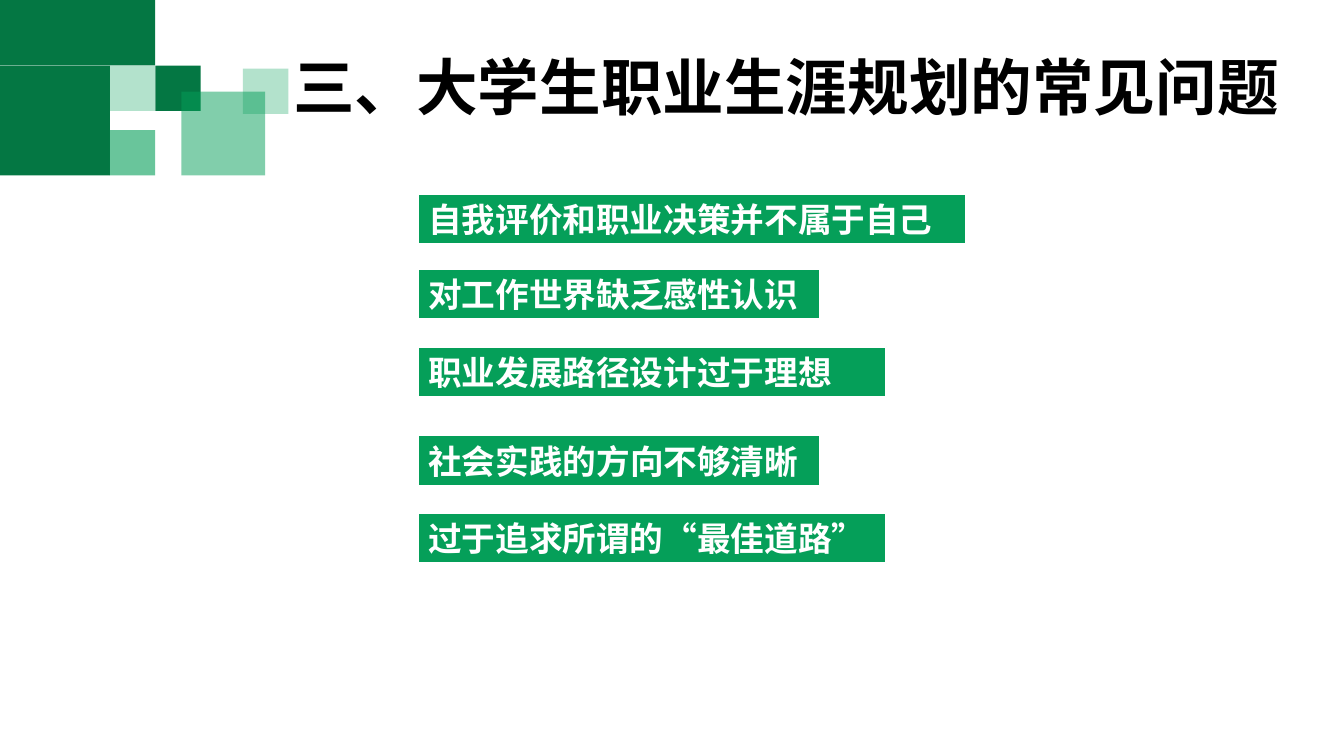
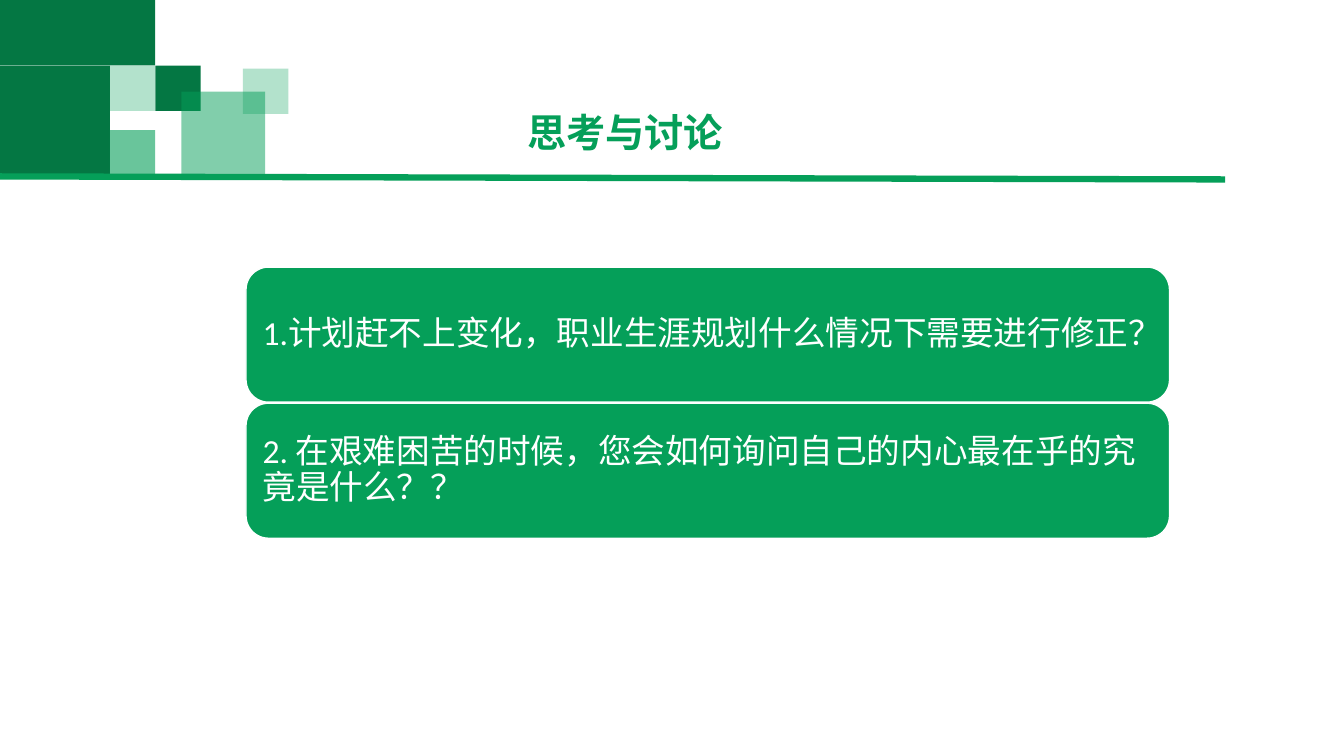
from lxml import etree
from pptx import Presentation
from pptx.dml.color import RGBColor
from pptx.enum import lang, shapes, text
from pptx.oxml import ns
from pptx.util import Inches, Pt

DARK_GREEN = RGBColor(0x04, 0x77, 0x43)
GREEN = RGBColor(0x05, 0x9F, 0x59)
WHITE = RGBColor(0xFF, 0xFF, 0xFF)
BLACK = RGBColor(0, 0, 0)
LATIN_FONT = "Calibri"
CHINESE_FONT = "Noto Sans CJK SC"

# Left, top, width, height, colour, opacity in percent
CORNER_BLOCKS = [
    (0, 0.65, 1.09, 1.09, DARK_GREEN, 100),
    (0, 0, 1.54, 0.65, DARK_GREEN, 100),
    (1.09, 0.65, 0.45, 0.45, GREEN, 30),
    (1.54, 0.65, 0.45, 0.45, DARK_GREEN, 100),
    (1.09, 1.29, 0.45, 0.45, GREEN, 60),
    (1.8, 0.91, 0.83, 0.83, GREEN, 50),
    (2.41, 0.68, 0.45, 0.45, GREEN, 30),
]
# Top, width, wording
PROBLEMS = [
    (1.92, 5.43, "自我评价和职业决策并不属于自己"),
    (2.67, 3.98, "对工作世界缺乏感性认识"),
    (3.44, 4.64, "职业发展路径设计过于理想"),
    (4.32, 3.98, "社会实践的方向不够清晰"),
    (5.09, 4.64, "过于追求所谓的“最佳道路”"),
]
QUESTIONS = [
    "1.计划赶不上变化，职业生涯规划什么情况下需要进行修正？",
    "2. 在艰难困苦的时候，您会如何询问自己的内心最在乎的究竟是什么？？",
]


def write(shape, wording, size, color, bold=False, latin=LATIN_FONT,
          align=text.PP_ALIGN.LEFT, anchor=text.MSO_ANCHOR.MIDDLE):
    """Fill a shape with one paragraph in the deck's fonts and return it."""
    frame = shape.text_frame
    frame.text = wording
    frame.word_wrap = True
    frame.vertical_anchor = anchor
    paragraph = frame.paragraphs[0]
    paragraph.alignment = align
    font = paragraph.runs[0].font
    font.name, font.size, font.bold = latin, Pt(size), bold
    font.color.rgb = color
    font.language_id = lang.MSO_LANGUAGE_ID.SIMPLIFIED_CHINESE
    east_asian = etree.Element(ns.qn("a:ea"), typeface=CHINESE_FONT)
    paragraph.runs[0]._r.rPr.find(ns.qn("a:latin")).addnext(east_asian)
    return paragraph


def add_block(slide, kind, box, color, opacity=100, outline=None):
    """Add a filled shape; outline is a white line width in points."""
    shape = slide.shapes.add_shape(kind, *map(Inches, box))
    shape.shadow.inherit = False
    shape.fill.solid()
    shape.fill.fore_color.rgb = color
    if opacity < 100:
        fill_color = shape._element.spPr.find(ns.qn("a:solidFill"))[0]
        etree.SubElement(fill_color, ns.qn("a:alpha"), val=str(opacity * 1000))
    if outline:
        shape.line.color.rgb = WHITE
        shape.line.width = Pt(outline)
    else:
        shape.line.fill.background()
    return shape


def add_base_slide(presentation):
    """Add a blank slide with the green corner blocks."""
    slide = presentation.slides.add_slide(presentation.slide_layouts[6])
    for *box, color, opacity in CORNER_BLOCKS:
        add_block(slide, shapes.MSO_SHAPE.RECTANGLE, box, color, opacity)
    return slide


def add_title(slide, box, wording, size, color, **style):
    title = slide.shapes.add_textbox(*map(Inches, box))
    paragraph = write(title, wording, size, color, bold=True,
                      anchor=text.MSO_ANCHOR.TOP, **style)
    paragraph.line_spacing = 0.9
    paragraph.space_before = Pt(10)


def add_title_rule(slide, start, end):
    rule = slide.shapes.add_connector(
        shapes.MSO_CONNECTOR.STRAIGHT, *map(Inches, start + end))
    rule.line.color.rgb = GREEN
    rule.line.width = Pt(4.5)
    etree.SubElement(rule._element.spPr, ns.qn("a:effectLst"))


def add_problem_bars(slide, left, height):
    for top, width, wording in PROBLEMS:
        bar = add_block(slide, shapes.MSO_SHAPE.RECTANGLE,
                        (left, top, width, height), GREEN, outline=1.5)
        write(bar, wording, 24, WHITE, bold=True)


def add_question_cards(slide, left, top, width, height, gap=0.01):
    """Stack the question cards over the given box."""
    count = len(QUESTIONS)
    card_height = (height - gap * (count - 1)) / count
    for index, wording in enumerate(QUESTIONS):
        card_top = top + index * (card_height + gap)
        card = add_block(slide, shapes.MSO_SHAPE.ROUNDED_RECTANGLE,
                         (left, card_top, width, card_height), GREEN, outline=1)
        write(card, wording, 24, WHITE).line_spacing = 0.9


def build_problems_slide(presentation):
    slide = add_base_slide(presentation)
    add_title(slide, (2.71, 0.52, 10.18, 1.57), "三、大学生职业生涯规划的常见问题",
              44, BLACK, latin=CHINESE_FONT, align=text.PP_ALIGN.CENTER)
    add_problem_bars(slide, left=4.15, height=0.5)


def build_discussion_slide(presentation):
    slide = add_base_slide(presentation)
    add_title(slide, (5.13, 1.08, 4.33, 0.52), "思考与讨论", 28, GREEN)
    add_title_rule(slide, (0, 1.75), (12.15, 1.78))
    add_question_cards(slide, 2.44, 2.65, 9.16, 2.69)


def main():
    presentation = Presentation()
    presentation.slide_width = Inches(13.33)
    presentation.slide_height = Inches(7.5)
    build_problems_slide(presentation)
    build_discussion_slide(presentation)
    presentation.save("out.pptx")


if __name__ == "__main__":
    main()
